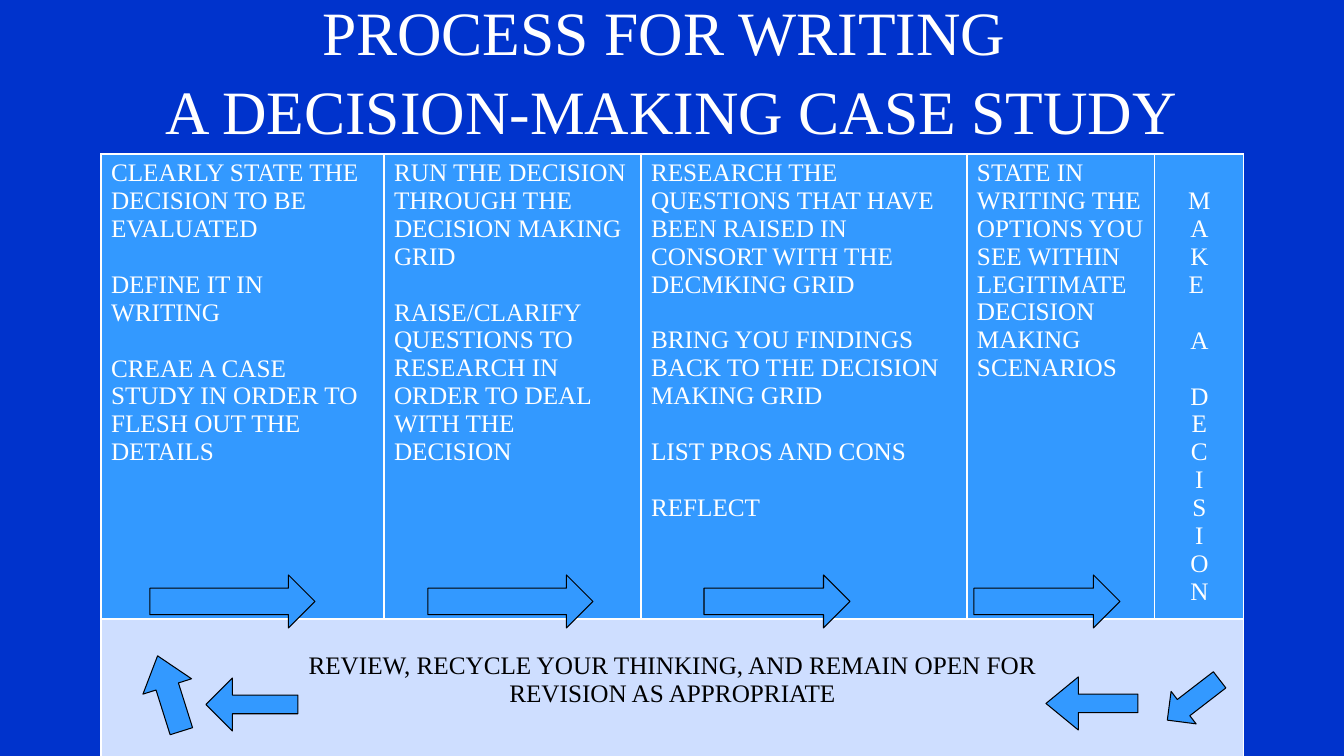
"""Build the decision-making case study process slide."""
import pptx
import pptx.dml.color
import pptx.enum.shapes
import pptx.enum.text
import pptx.oxml
import pptx.oxml.ns
import pptx.util

EMU_PER_PX = 914400 / 100.8
FONT = "Times New Roman"
WHITE, BLACK, BLUE = "FFFFFF", "000000", "3399FF"
MARGIN_TOP, LINE_HEIGHT = 5, 28
ALIGN = pptx.enum.text.PP_ALIGN
SHAPE = pptx.enum.shapes.MSO_SHAPE


def px(length):
    return pptx.util.Emu(round(length * EMU_PER_PX))


def color(value):
    return pptx.dml.color.RGBColor.from_string(value)


presentation = pptx.Presentation()
presentation.slide_width, presentation.slide_height = px(1344), px(756)
slide = presentation.slides.add_slide(presentation.slide_layouts[5])
slide.background.fill.solid()
slide.background.fill.fore_color.rgb = color("0033CC")

title = slide.shapes.title
title.left, title.top, title.width, title.height = px(101), px(0), px(1142), px(135)
title.text_frame.text = "PROCESS FOR WRITING \vA DECISION-MAKING CASE STUDY"
title.text_frame.vertical_anchor = pptx.enum.text.MSO_ANCHOR.MIDDLE
title.text_frame.auto_size = pptx.enum.text.MSO_AUTO_SIZE.NONE
paragraph = title.text_frame.paragraphs[0]
paragraph.alignment = ALIGN.CENTER
paragraph.line_spacing = 1.07
paragraph.font.name, paragraph.font.size = FONT, pptx.util.Pt(44)
paragraph.font.color.rgb = color(WHITE)

column_widths = [283, 257, 326, 188, 89]
row_heights = [465, 142]
table = slide.shapes.add_table(
    2, 5, px(101), px(154), px(sum(column_widths)), px(sum(row_heights))).table
for column, width in zip(table.columns, column_widths):
    column.width = px(width)
for row, height in zip(table.rows, row_heights):
    row.height = px(height)
table.cell(1, 0).merge(table.cell(1, 4))

steps = [
    [["CLEARLY STATE THE DECISION TO BE EVALUATED"],
     ["DEFINE IT IN WRITING"],
     ["CREAE A CASE STUDY IN ORDER TO FLESH OUT THE DETAILS"]],
    [["RUN THE DECISION THROUGH THE DECISION MAKING GRID"],
     ["RAISE/CLARIFY QUESTIONS TO RESEARCH IN ORDER TO DEAL WITH THE DECISION"]],
    [["RESEARCH THE QUESTIONS THAT HAVE BEEN RAISED IN CONSORT WITH THE DECMKING GRID"],
     ["BRING YOU FINDINGS BACK TO THE DECISION MAKING GRID"],
     ["LIST PROS AND CONS"],
     ["REFLECT"]],
    [["STATE IN WRITING THE OPTIONS YOU SEE WITHIN LEGITIMATE DECISION MAKING SCENARIOS"]],
]
decision = [["M", "A", "K", "E "], ["A"], list("DECISION")]
review = [["REVIEW, RECYCLE YOUR THINKING, AND REMAIN OPEN FOR",
           "REVISION AS APPROPRIATE"]]

cells = [(0, column, blocks, ALIGN.LEFT, WHITE, BLUE, MARGIN_TOP)
         for column, blocks in enumerate(steps)]
cells.append((0, 4, decision, ALIGN.CENTER, WHITE, BLUE, MARGIN_TOP + LINE_HEIGHT))
cells.append((1, 0, review, ALIGN.CENTER, BLACK, "CEDEFF", MARGIN_TOP + LINE_HEIGHT))

for row, column, blocks, alignment, text_color, fill_color, margin_top in cells:
    cell = table.cell(row, column)
    cell.margin_top = px(margin_top)
    frame = cell.text_frame
    frame.text = "\n".join(line for block in blocks for line in block)
    for paragraph in frame.paragraphs:
        paragraph.alignment = alignment
        paragraph.font.name, paragraph.font.size = FONT, pptx.util.Pt(18)
        paragraph.font.color.rgb = color(text_color)
    block_end = 0
    for block in blocks[:-1]:
        block_end += len(block)
        frame.paragraphs[block_end - 1].space_after = px(LINE_HEIGHT)
    cell.fill.solid()
    cell.fill.fore_color.rgb = color(fill_color)

for cell in table.iter_cells():
    properties = cell._tc.get_or_add_tcPr()
    for position, side in enumerate(("lnL", "lnR", "lnT", "lnB")):
        properties.insert(position, pptx.oxml.parse_xml(
            f'<a:{side} {pptx.oxml.ns.nsdecls("a")} w="12700"><a:solidFill>'
            f'<a:srgbClr val="{WHITE}"/></a:solidFill></a:{side}>'))

arrows = [(SHAPE.RIGHT_ARROW, left, 575, width, 53, 0, [])
          for left, width in ((150, 165), (428, 165), (704, 146), (974, 146))]
arrows += [
    (SHAPE.DOWN_ARROW, 1173, 667, 41, 66, 52.4, []),
    (SHAPE.LEFT_ARROW, 1046, 677, 92, 53, 0, [0.35, 0.61]),
    (SHAPE.LEFT_ARROW, 206, 678, 92, 53, 0, [0.35, 0.5]),
    (SHAPE.UP_ARROW, 144, 654, 51, 79, 342.5, [0.46, 0.63]),
]
for kind, left, top, width, height, rotation, adjustments in arrows:
    arrow = slide.shapes.add_shape(kind, px(left), px(top), px(width), px(height))
    arrow.rotation = rotation
    for index, value in enumerate(adjustments):
        arrow.adjustments[index] = value
    arrow.shadow.inherit = False
    arrow.fill.solid()
    arrow.fill.fore_color.rgb = color(BLUE)
    arrow.line.color.rgb = color(BLACK)
    arrow.line.width = pptx.util.Pt(0.75)

presentation.save("out.pptx")
